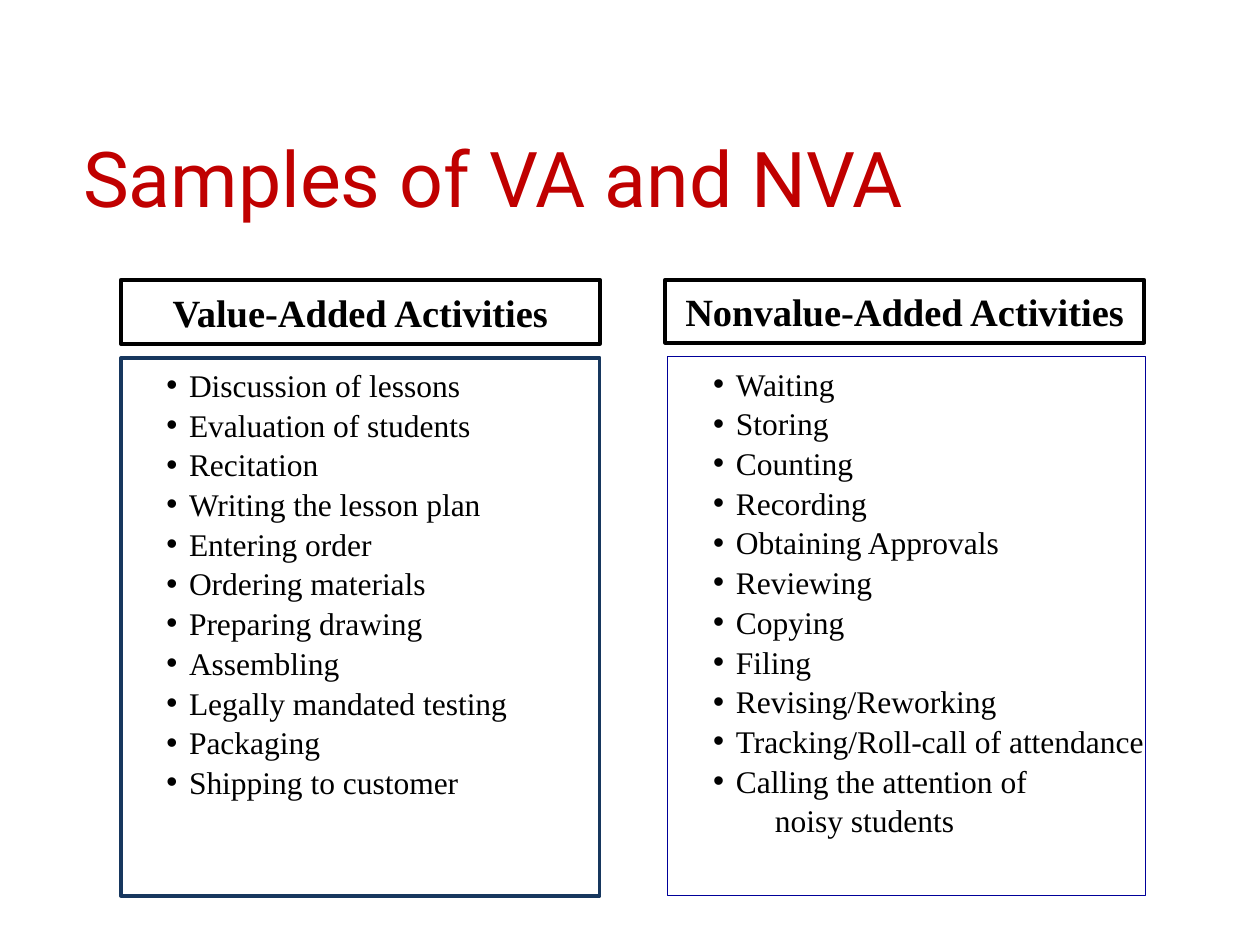
from dataclasses import dataclass

from lxml import etree
from pptx import Presentation
from pptx import util as u
from pptx.dml.color import RGBColor
from pptx.enum import text
from pptx.oxml.ns import qn


@dataclass(frozen=True)
class Theme:
    title_font: str = "Roboto"
    body_font: str = "Times New Roman"
    title_size: int = 44
    heading_size: int = 22
    list_size: int = 18
    red: str = "C00000"
    black: str = "000000"
    white: str = "FFFFFF"
    navy: str = "17375E"
    blue: str = "000099"


THEME = Theme()
TITLE_FORMAT = {"name": THEME.title_font, "size": u.Pt(THEME.title_size), "bold": False}
HEADING_FORMAT = {"name": THEME.body_font, "size": u.Pt(THEME.heading_size), "bold": True}
LIST_FORMAT = {"name": THEME.body_font, "size": u.Pt(THEME.list_size), "bold": False}

COLUMNS = [
    {
        "heading": "Value-Added Activities",
        "heading_area": (0.96, 2.22, 3.8, 0.51),
        "list_area": (0.96, 2.84, 3.8, 4.27),
        "fill": THEME.white,
        "line": (THEME.navy, 2),
        "items": [
            "Discussion of lessons", "Evaluation of students", "Recitation",
            "Writing the lesson plan", "Entering order", "Ordering materials",
            "Preparing drawing", "Assembling", "Legally mandated testing",
            "Packaging", "Shipping to customer",
        ],
    },
    {
        "heading": "Nonvalue-Added Activities",
        "heading_area": (5.28, 2.22, 3.8, 0.5),
        "list_area": (5.3, 2.83, 3.79, 4.28),
        "fill": None,
        "line": (THEME.blue, 0.75),
        "items": [
            "Waiting", "Storing", "Counting", "Recording", "Obtaining Approvals",
            "Reviewing", "Copying", "Filing", "Revising/Reworking",
            "Tracking/Roll-call of attendance", "Calling the attention of",
        ],
        "continuation": "noisy students",
    },
]


def set_attributes(target, values):
    for name, value in values.items():
        setattr(target, name, value)


def place(box, area, anchor):
    names = ("left", "top", "width", "height")
    set_attributes(box, dict(zip(names, map(u.Inches, area))))
    set_attributes(box.text_frame, {
        "auto_size": text.MSO_AUTO_SIZE.NONE,
        "vertical_anchor": anchor,
        "word_wrap": True,
    })


def outline(box, color, width):
    box.line.color.rgb = RGBColor.from_string(color)
    box.line.width = u.Pt(width)


def write(para, words, font_format, color, align=text.PP_ALIGN.LEFT):
    set_attributes(para, {"alignment": align, "space_before": u.Pt(0)})
    span = para.add_run()
    span.text = words
    set_attributes(span.font, font_format)
    span.font.color.rgb = RGBColor.from_string(color)


def indent(para, margin, hanging=0, bullet=None):
    properties = para._p.get_or_add_pPr()
    properties.set("marL", str(u.Inches(margin)))
    properties.set("indent", str(u.Inches(-hanging)))
    if bullet:
        etree.SubElement(properties, qn("a:buChar"), char=bullet)
    else:
        etree.SubElement(properties, qn("a:buNone"))


def fill_title(box, words):
    place(box, (0.56, 0.61, 9.03, 1.59), text.MSO_ANCHOR.MIDDLE)
    write(box.text_frame.paragraphs[0], words, TITLE_FORMAT, THEME.red)


def fill_heading(box, column):
    place(box, column["heading_area"], text.MSO_ANCHOR.MIDDLE)
    outline(box, THEME.black, 2.25)
    write(box.text_frame.paragraphs[0], column["heading"], HEADING_FORMAT,
          THEME.black, text.PP_ALIGN.CENTER)


def fill_list(box, column):
    place(box, column["list_area"], text.MSO_ANCHOR.TOP)
    outline(box, *column["line"])
    if column["fill"]:
        box.fill.solid()
        box.fill.fore_color.rgb = RGBColor.from_string(column["fill"])
    frame = box.text_frame
    frame.margin_right = 0
    lines = [(item, (0.44, 0.18, "•")) for item in column["items"]]
    if "continuation" in column:
        lines.append((column["continuation"], (0.75,)))
    for number, (words, indentation) in enumerate(lines):
        para = frame.add_paragraph() if number else frame.paragraphs[0]
        para.line_spacing = 1.05
        write(para, words, LIST_FORMAT, THEME.black)
        indent(para, *indentation)


def main():
    deck = Presentation()
    deck.slide_width, deck.slide_height = u.Inches(10), u.Inches(7.5)
    page = deck.slides.add_slide(deck.slide_layouts.get_by_name("Comparison"))
    fill_title(page.shapes.title, "Samples of VA and NVA")
    for number, column in enumerate(COLUMNS):
        fill_heading(page.placeholders[1 + 2 * number], column)
        fill_list(page.placeholders[2 + 2 * number], column)
    deck.save("out.pptx")


if __name__ == "__main__":
    main()
